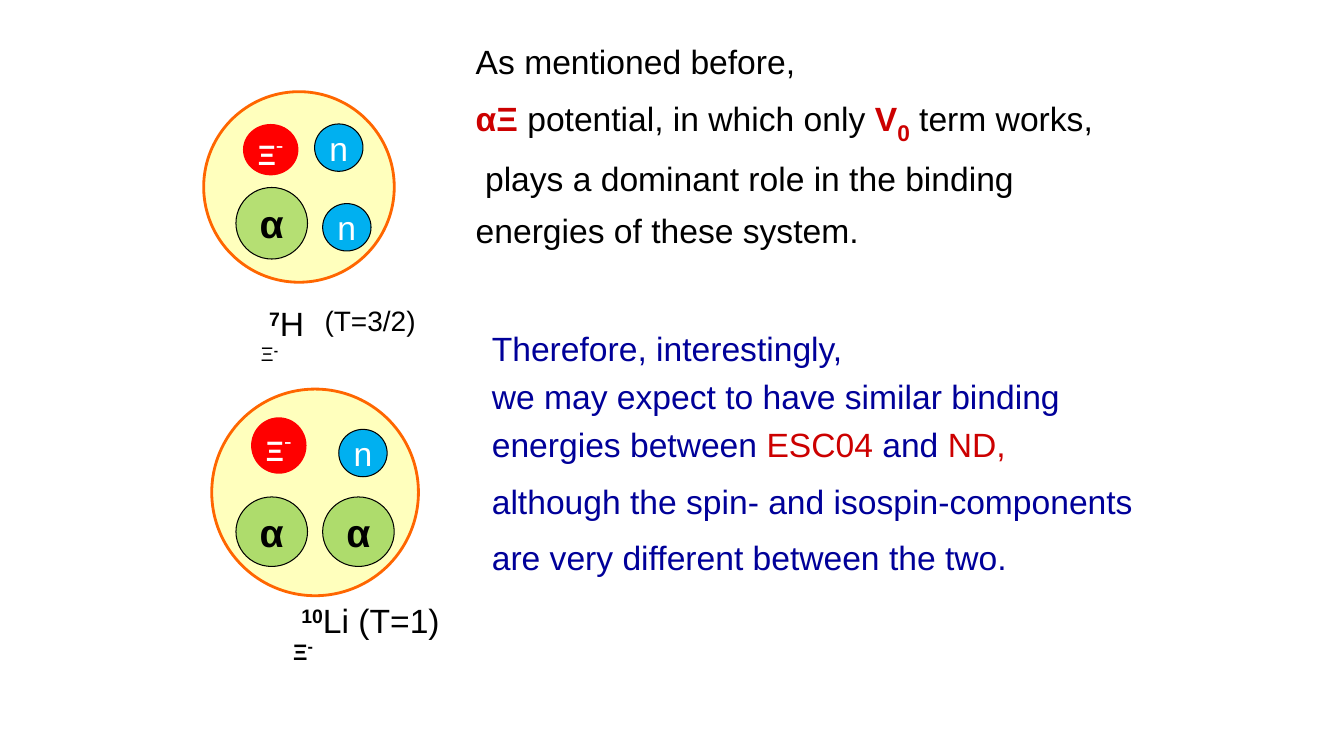
from pptx import Presentation
from pptx.dml.color import RGBColor
from pptx.enum.shapes import MSO_SHAPE as Shape
from pptx.enum.text import MSO_ANCHOR as Anchor, MSO_AUTO_SIZE as AutoSize, PP_ALIGN as Align
from pptx.oxml.ns import qn
from pptx.util import Inches, Pt
from lxml import etree

BLACK = RGBColor(0x00, 0x00, 0x00)
WHITE = RGBColor(0xFF, 0xFF, 0xFF)
DARK_RED = RGBColor(0xCC, 0x00, 0x00)
NAVY = RGBColor(0x00, 0x00, 0x99)
YELLOW = RGBColor(0xFF, 0xFF, 0x00)
ORANGE = RGBColor(0xFF, 0x66, 0x00)
GREEN = RGBColor(0x92, 0xD0, 0x50)
RED = RGBColor(0xFF, 0x00, 0x00)
BLUE = RGBColor(0x00, 0xB0, 0xF0)


def add_span(para, text, size=24, color=BLACK, bold=False, baseline=0):
    span = para.add_run()
    span.text = text
    span.font.name = "Arial"
    span.font.size = Pt(size)
    span.font.bold = bold
    span.font.color.rgb = color
    if baseline:
        span._r.get_or_add_rPr().set("baseline", str(baseline * 1000))


def add_text(parent, box, paragraphs, wrap=False):
    frame = parent.shapes.add_textbox(*map(Inches, box)).text_frame
    frame.word_wrap = wrap
    frame.auto_size = AutoSize.SHAPE_TO_FIT_TEXT
    for index, (spacing, spans) in enumerate(paragraphs):
        para = frame.add_paragraph() if index else frame.paragraphs[0]
        para.line_spacing = spacing
        for text, style in spans:
            add_span(para, text, **style)


def add_circle(group, box, fill, opacity=100, line=BLACK, width=0.75, spans=()):
    circle = group.shapes.add_shape(Shape.OVAL, *map(Inches, box))
    circle.shadow.inherit = False
    circle.fill.solid()
    circle.fill.fore_color.rgb = fill
    if opacity < 100:
        color = circle._element.spPr.find(qn("a:solidFill"))[0]
        etree.SubElement(color, qn("a:alpha")).set("val", str(opacity * 1000))
    if line is None:
        circle.line.fill.background()
    else:
        circle.line.color.rgb = line
        circle.line.width = Pt(width)
    if spans:
        frame = circle.text_frame
        frame.word_wrap = False
        frame.vertical_anchor = Anchor.MIDDLE
        para = frame.paragraphs[0]
        para.alignment = Align.CENTER
        for text, style in spans:
            add_span(para, text, **style)


def add_nucleus(page, box, alphas, alpha_height, opacity, xi, neutrons, labels):
    left, top, size = box
    group = page.shapes.add_group_shape()
    add_circle(group, (left, top, size, size), YELLOW, 26, ORANGE, 2)
    for x, y in alphas:
        add_circle(group, (left + x, top + y, 0.71, alpha_height), GREEN, opacity,
                   spans=[("α", dict(size=28, bold=True))])
    x, y, height = xi
    add_circle(group, (left + x, top + y, 0.55, height), RED, line=None,
               spans=[("Ξ", dict(size=20, color=WHITE, bold=True)),
                      ("-", dict(size=28, color=WHITE, baseline=30))])
    for x, y in neutrons:
        add_circle(group, (left + x, top + y, 0.48, 0.47), BLUE,
                   spans=[("n", dict(color=WHITE))])
    for x, y, width, height, spans in labels:
        add_text(group, (left + x, top + y, width, height), [(1.0, spans)])


def add_potential_text(page, box):
    red = dict(color=DARK_RED, bold=True)
    add_text(page, box, [
        (1.0, [("As mentioned before,", {})]),
        (1.2, [("αΞ", red), (" potential, in which only ", {}), ("V", red),
               ("0", dict(red, size=28, baseline=-25)), (" term works,", {})]),
        (1.3, [(" plays a dominant role in the binding", {})]),
        (1.3, [("energies of these system.", {})]),
    ], wrap=True)


def add_conclusion_text(page, box):
    navy, red = dict(color=NAVY), dict(color=DARK_RED)
    add_text(page, box, [
        (1.2, [("Therefore, interestingly,", navy)]),
        (1.2, [("we may expect to have similar binding energies between ", navy),
               ("ESC04", red), (" and ", navy), ("ND,", red)]),
        (1.4, [("although the spin- and isospin-components are very different "
                "between the two.", navy)]),
    ], wrap=True)


def main():
    deck = Presentation()
    deck.slide_width, deck.slide_height = Inches(13.33), Inches(7.5)
    page = deck.slides.add_slide(deck.slide_layouts[6])
    raised = dict(bold=True, baseline=30)
    add_potential_text(page, (4.62, 0.36, 7.88, 2.04))
    add_nucleus(
        page, (2.02, 0.91, 1.89), alphas=[(0.32, 0.95)], alpha_height=0.71, opacity=68,
        xi=(0.39, 0.32, 0.51), neutrons=[(1.1, 0.32), (1.18, 1.11)],
        labels=[(0.55, 2.05, 0.57, 0.5, [("7", raised), ("H", {})]),
                (0.47, 2.41, 0.38, 0.34, [("Ξ", dict(size=14)), ("-", dict(raised, size=16))]),
                (1.1, 2.05, 1.15, 0.43, [("(T=3/2)", dict(size=20))])])
    add_nucleus(
        page, (2.1, 3.86, 2.05), alphas=[(0.24, 1.07), (1.1, 1.07)], alpha_height=0.69,
        opacity=74, xi=(0.39, 0.28, 0.56), neutrons=[(1.26, 0.4)],
        labels=[(0.79, 2.04, 1.65, 0.5, [("10", raised), ("Li (T=1)", {})]),
                (0.71, 2.37, 0.41, 0.37, [("Ξ", dict(size=16, bold=True)),
                                          ("-", dict(raised, size=20))])])
    add_conclusion_text(page, (4.78, 3.12, 6.61, 2.69))
    deck.save("out.pptx")


if __name__ == "__main__":
    main()
